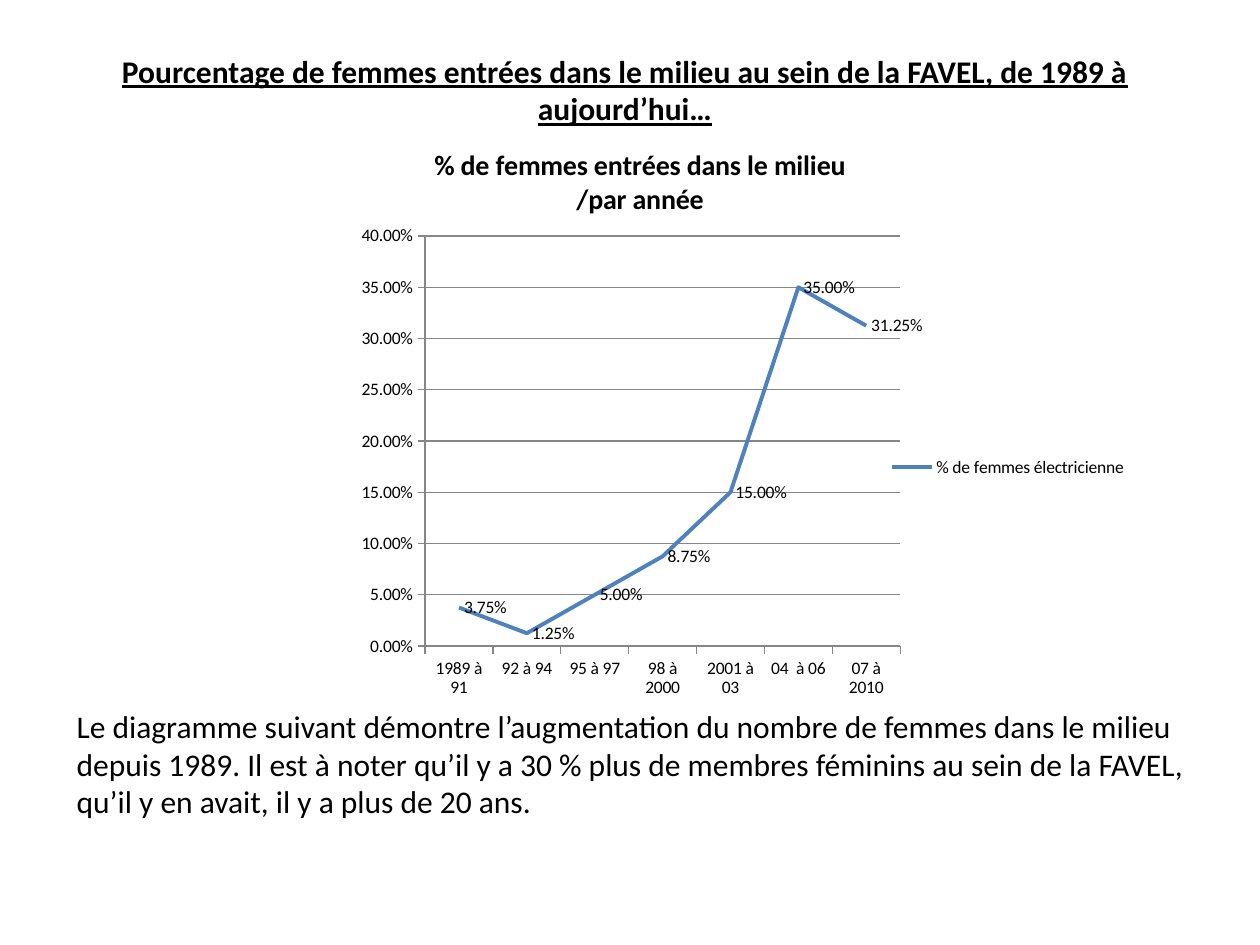
from lxml import etree
from pptx import Presentation
from pptx.chart.data import CategoryChartData
from pptx.dml.color import RGBColor
from pptx.enum import chart as ch, text
from pptx.oxml.ns import qn
from pptx.util import Inches, Pt

THEME = {
    "font": "Calibri",
    "ink": RGBColor.from_string("000000"),
    "line": RGBColor.from_string("4F81BD"),
    "grid": RGBColor.from_string("868686"),
    "text": 18, "chart_title": 16, "chart": 10,
}
HEADING = ("Pourcentage de femmes entrées dans le milieu au sein de la FAVEL, "
           "de 1989 à aujourd’hui…")
COMMENT = ("Le diagramme suivant démontre l’augmentation du nombre de femmes dans le "
           "milieu depuis 1989. Il est à noter qu’il y a 30 % plus de membres féminins "
           "au sein de la FAVEL, qu’il y en avait, il y a plus de 20 ans.")
CHART_TITLE = ["% de femmes entrées dans le milieu", "/par année"]
SERIES_NAME = "% de femmes électricienne"
PERCENT = "0.00%"
SHARES = {
    "1989 à 91": 0.0375, "92 à 94": 0.0125, "95 à 97": 0.05, "98 à 2000": 0.0875,
    "2001 à 03": 0.15, "04  à 06": 0.35, "07 à 2010": 0.3125,
}
HEADING_BOX = (0.67, 0.36, 8.58, 0.71)
CHART_BOX = (0.59, 0.99, 8.98, 4.65)
COMMENT_BOX = (0.51, 5.56, 9.21, 1.01)
# Fractions of the chart: left, top, width, height
PLOT_AREA = (0.31, 0.19, 0.42, 0.7)
LEGEND_AREA = (0.72, 0.55, 0.21, 0.07)


def style(font, size, **flags):
    font.name, font.size = THEME["font"], Pt(size)
    font.color.rgb = THEME["ink"]
    for flag, value in flags.items():
        setattr(font, flag, value)


def write(shape, content, box, align=text.PP_ALIGN.LEFT, **flags):
    shape.left, shape.top, shape.width, shape.height = map(Inches, box)
    frame = shape.text_frame
    frame.word_wrap = True
    frame.auto_size = text.MSO_AUTO_SIZE.NONE
    frame.vertical_anchor = text.MSO_ANCHOR.TOP
    paragraph = frame.paragraphs[0]
    paragraph.alignment = align
    run = paragraph.add_run()
    run.text = content
    style(run.font, THEME["text"], **flags)


def place(parent, index, area, inner=False):
    """Give a chart part a manual layout, as fractions of the chart."""
    for old in parent.findall(qn("c:layout")):
        parent.remove(old)
    layout = etree.Element(qn("c:layout"))
    manual = etree.SubElement(layout, qn("c:manualLayout"))
    settings = [("layoutTarget", "inner")] if inner else []
    settings += [("xMode", "edge"), ("yMode", "edge"), *zip("xywh", area)]
    for tag, value in settings:
        etree.SubElement(manual, qn(f"c:{tag}")).set("val", str(value))
    parent.insert(index, layout)


def add_share_chart(slide):
    data = CategoryChartData(number_format=PERCENT)
    data.categories = list(SHARES)
    data.add_series(SERIES_NAME, list(SHARES.values()))
    chart = slide.shapes.add_chart(
        ch.XL_CHART_TYPE.LINE, *map(Inches, CHART_BOX), data).chart
    style(chart.font, THEME["chart"])

    title = chart.chart_title.text_frame
    for number, line in enumerate(CHART_TITLE):
        paragraph = title.add_paragraph() if number else title.paragraphs[0]
        run = paragraph.add_run()
        run.text = line
        style(run.font, THEME["chart_title"], bold=True)

    chart.has_legend = True
    chart.legend.position = ch.XL_LEGEND_POSITION.RIGHT
    chart.legend.include_in_layout = False
    place(chart.legend._element, 1, LEGEND_AREA)
    place(chart._chartSpace.chart.plotArea, 0, PLOT_AREA, inner=True)

    shares = chart.value_axis
    shares.minimum_scale, shares.maximum_scale, shares.major_unit = 0, 0.4, 0.05
    shares.tick_labels.number_format = PERCENT
    shares.tick_labels.number_format_is_linked = False
    for lined in (shares, chart.category_axis, shares.major_gridlines):
        lined.format.line.color.rgb = THEME["grid"]
        lined.format.line.width = Pt(0.75)
    for axis in (shares, chart.category_axis):
        axis.major_tick_mark = ch.XL_TICK_MARK.OUTSIDE

    plot = chart.plots[0]
    plot.vary_by_categories = False
    series = plot.series[0]
    series.smooth = False
    series.marker.style = ch.XL_MARKER_STYLE.NONE
    series.format.line.color.rgb = THEME["line"]
    series.format.line.width = Pt(2.25)
    labels = series.data_labels
    labels.show_value = True
    labels.number_format = PERCENT
    labels.number_format_is_linked = False
    labels.position = ch.XL_LABEL_POSITION.RIGHT
    style(labels.font, THEME["chart"])


def main():
    deck = Presentation()
    deck.slide_width, deck.slide_height = Inches(10), Inches(7.5)
    slide = deck.slides.add_slide(deck.slide_layouts.get_by_name("Title Only"))
    add_share_chart(slide)
    write(slide.shapes.title, HEADING, HEADING_BOX, text.PP_ALIGN.CENTER,
          bold=True, underline=True)
    comment = slide.shapes.add_textbox(*map(Inches, COMMENT_BOX))
    write(comment, COMMENT, COMMENT_BOX)
    deck.save("out.pptx")


if __name__ == "__main__":
    main()
